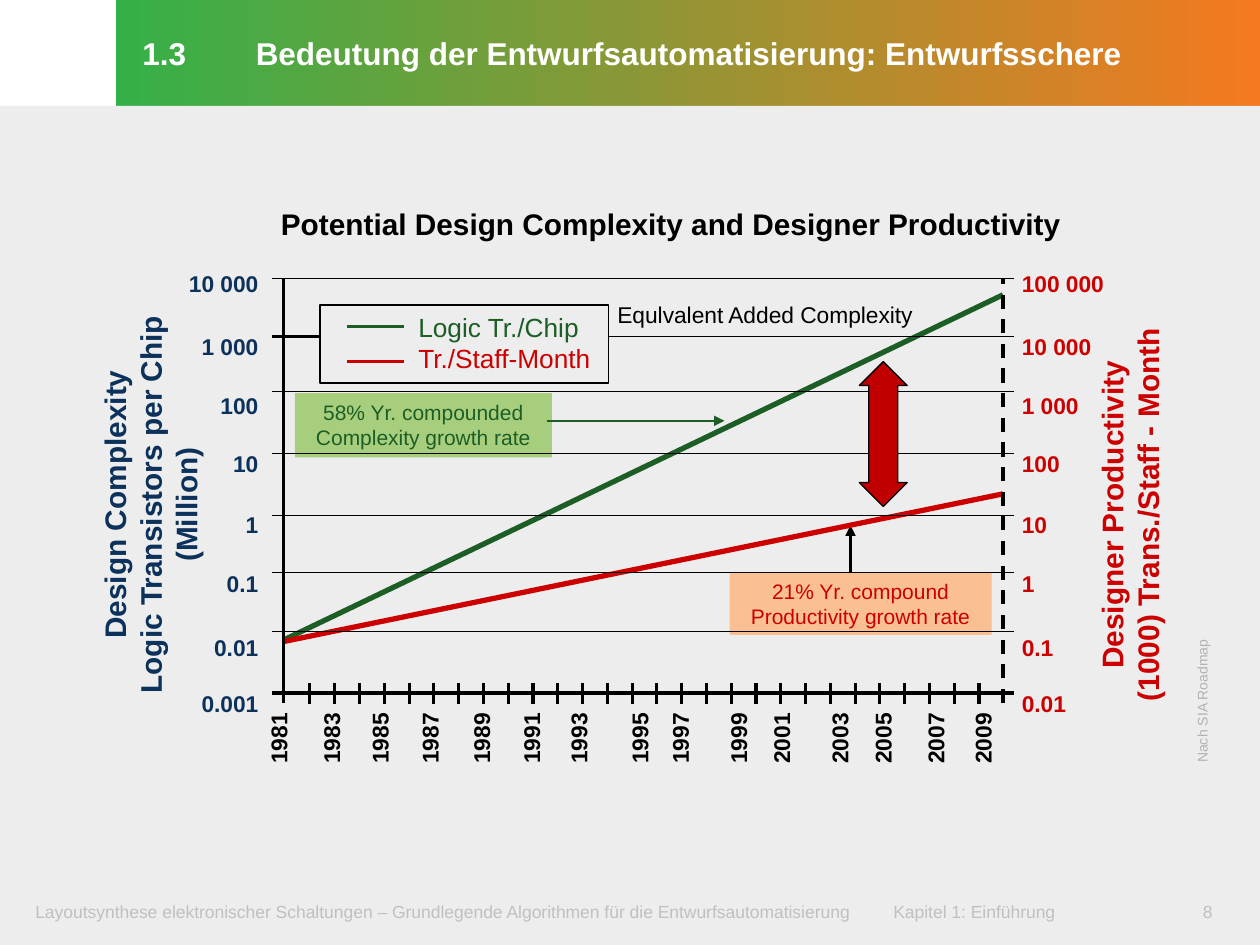
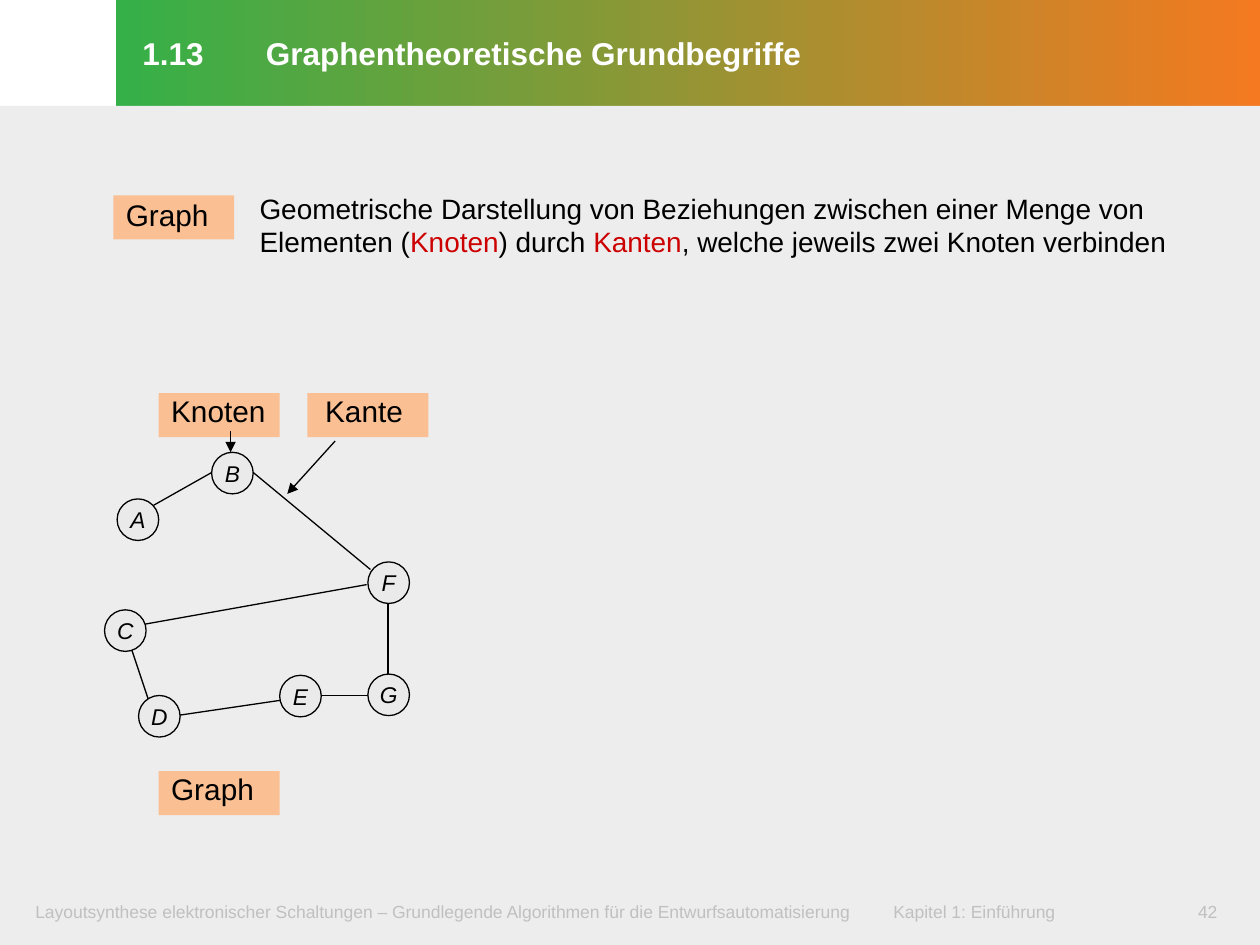
from copy import deepcopy

from lxml import etree
from pptx import Presentation
from pptx import util as u
from pptx.dml import color as dml
from pptx.enum import dml as lines, shapes, text
from pptx.oxml import ns

FONT = "Arial"
BLACK, WHITE, PANEL, NODE = "000000", "FFFFFF", "EDEDED", "EAEAEA"
GREEN, RED, NAVY, PEACH, LIME = "1C5E25", "CC0000", "0C325C", "FAC094", "A7CE7C"
FOOT, NOTE, CRIMSON = "C0C0C0", "B2B2B2", "C00000"
LEFT, MID, RIGHT = text.PP_ALIGN.LEFT, text.PP_ALIGN.CENTER, text.PP_ALIGN.RIGHT
TOP, CENTER = text.MSO_ANCHOR.TOP, text.MSO_ANCHOR.MIDDLE
KIND = shapes.MSO_SHAPE
PAD = (0.11, 0.05, 0.11, 0.05)
FOOT_PAD = (0.12, 0.06, 0.12, 0.06)
TITLE_PAD = (0.21, 0.05, 0.1, 0.07)


def rgb(code):
    """Turn a hex string into a colour."""
    return dml.RGBColor.from_string(code)


def put(obj, vals):
    """Set attributes of an object from a dict."""
    for key, val in vals.items():
        setattr(obj, key, val)


def box(at):
    """Turn left, top, width, height in inches into lengths."""
    return [u.Inches(n) for n in at]


def place(shape, at):
    """Move and size a shape."""
    put(shape, dict(zip(("left", "top", "width", "height"), box(at))))


def add_xml(parent, tag, **attrs):
    """Append a drawing element to a parent."""
    return etree.SubElement(parent, ns.qn(tag), attrs)


def add_run(par, words, color, look):
    """Add text in one colour, with a line break at each newline."""
    for i, line in enumerate(words.split("\n")):
        if i:
            par.add_line_break()
            last = par.runs[-1]._r.rPr
            par._p[-1].append(deepcopy(last))
        if line:
            run = par.add_run()
            run.text = line
            put(run.font, look)
            run.font.color.rgb = rgb(color)


def write(shape, paras, size, color=BLACK, pad=PAD, align=LEFT, anchor=TOP,
          wrap=True, pitch=(), before=0, tab=None, **look):
    """Fill a shape with paragraphs, each a string or a list of coloured runs."""
    frame = shape.text_frame
    edges = ("margin_left", "margin_top", "margin_right", "margin_bottom")
    put(frame, dict(zip(edges, box(pad))))
    put(frame, {"word_wrap": wrap, "vertical_anchor": anchor,
                "auto_size": text.MSO_AUTO_SIZE.NONE})
    look = {"name": FONT, "size": u.Pt(size), **look}
    for i, runs in enumerate(paras):
        par = frame.add_paragraph() if i else frame.paragraphs[0]
        par.alignment = align
        if tab:
            tabs = add_xml(par._p.get_or_add_pPr(), "a:tabLst")
            add_xml(tabs, "a:tab", pos=str(u.Inches(tab)), algn="l")
        if pitch:
            par.line_spacing = pitch[i]
        if i and before:
            par.space_before = u.Pt(before)
        for words, tint in [(runs, color)] if isinstance(runs, str) else runs:
            add_run(par, words, tint, look)


def label(slide, at, paras, size, turn=0, **style):
    """Add a text box, turned by some degrees."""
    area = slide.shapes.add_textbox(*box(at))
    area.rotation = turn
    write(area, paras, size, **style)


def block(slide, at, fill=None, line=None, width=0.75, kind=KIND.RECTANGLE):
    """Add a preset shape with an optional fill and outline."""
    shape = slide.shapes.add_shape(kind, *box(at))
    shape.shadow.inherit = False
    if fill:
        shape.fill.solid()
        shape.fill.fore_color.rgb = rgb(fill)
    else:
        shape.fill.background()
    if line:
        shape.line.color.rgb = rgb(line)
        shape.line.width = u.Pt(width)
    else:
        shape.line.fill.background()
    return shape


def stroke(slide, x1, y1, x2, y2, width=0.75, color=BLACK, dash=False, head=False):
    """Draw a straight line, dashed or with an arrowhead on request."""
    ends = box((x1, y1, x2, y2))
    link = slide.shapes.add_connector(shapes.MSO_CONNECTOR.STRAIGHT, *ends)
    link.line.color.rgb = rgb(color)
    link.line.width = u.Pt(width)
    if dash:
        link.line.dash_style = lines.MSO_LINE.DASH
    if head:
        add_xml(link.line._get_or_add_ln(), "a:tailEnd", type="triangle")
    add_xml(link._element.spPr, "a:effectLst")


def new_slide(deck, title, tab, number):
    """Add a slide with the title band, panel and footer."""
    slide = deck.slides.add_slide(deck.slide_layouts[5])
    band = slide.shapes.title
    place(band, (0.92, 0, 9.08, 0.84))
    band.fill.gradient()
    band.fill.gradient_angle = 0
    for stop, code in zip(band.fill.gradient_stops, ("35B048", "F47920")):
        stop.color.rgb = rgb(code)
    write(band, [title], 18, WHITE, TITLE_PAD, anchor=CENTER,
          pitch=[u.Pt(23.5)], tab=tab, bold=True)
    block(slide, (0, 0.84, 10, 6.66), PANEL)
    foot = ("Layoutsynthese elektronischer Schaltungen – Grundlegende Algorithmen "
            "für die Entwurfsautomatisierung\tKapitel 1: Einführung")
    label(slide, (0.16, 7.09, 8.85, 0.32), [foot], 10, color=FOOT,
          pad=FOOT_PAD, tab=6.81)
    label(slide, (9.29, 7.09, 0.59, 0.32), [number], 10, color=FOOT,
          pad=FOOT_PAD, align=MID)
    return slide


def draw_axes(slide):
    """Draw the axes, grid lines and year ticks."""
    stroke(slide, 2.16, 5.5, 8.05, 5.5, 2)
    stroke(slide, 2.25, 5.58, 2.25, 2.21, 2)
    stroke(slide, 7.96, 5.58, 7.96, 2.21, 2, dash=True)
    for y in (2.21, 3.11, 3.6, 4.09, 4.54, 5.01):
        stroke(slide, 2.16, y, 8.05, y, 0.5)
    stroke(slide, 4.83, 2.67, 8.05, 2.67, 0.5)
    stroke(slide, 2.16, 2.67, 2.54, 2.67, 1.75)
    first, last, count = 2.46, 7.77, 28
    for i in range(count):
        x = first + i * (last - first) / (count - 1)
        stroke(slide, x, 5.42, x, 5.59, 1.75)


def label_axes(slide):
    """Write the scales and names of the axes."""
    scale = {"size": 13, "before": 7.5, "bold": True}
    years = [str(y) for y in range(1981, 2010, 2)]
    gaps = [1, 1.45, 1.3, 1.35, 1.4, 1.35, 1.25, 1.75, 1, 1.65, 1.1, 1.65,
            1.1, 1.45, 1.25]
    label(slide, (4.51, 2.79, 0.92, 5.84), years, turn=270, pitch=gaps, **scale)
    steps = ["100 000", "10 000", "1 000", "100", "10", "1", "0.1", "0.01", "0.001"]
    gaps = [1, 1.85, 1.65, 1.65, 1.75, 1.7, 1.85, 1.55]
    label(slide, (1.33, 2.09, 0.83, 3.6), steps[1:], color=NAVY, align=RIGHT,
          pitch=gaps, **scale)
    label(slide, (8, 2.09, 0.96, 3.6), steps[:-1], color=RED, pitch=gaps, **scale)
    name = {"size": 17, "turn": 270, "align": MID, "bold": True}
    label(slide, (-0.48, 3.53, 3.34, 0.95),
          ["Design Complexity\nLogic Transistors per Chip\n(Million)"],
          color=NAVY, **name)
    label(slide, (7.21, 3.75, 3.51, 0.67),
          ["Designer Productivity\n(1000) Trans./Staff - Month"], color=RED, **name)


def draw_key(slide):
    """Draw the legend of the two growth lines."""
    block(slide, (2.54, 2.42, 2.29, 0.62), line=BLACK, width=1)
    for y, color in ((2.59, GREEN), (2.87, RED)):
        stroke(slide, 2.75, y, 3.21, y, 1.5, color)
    label(slide, (3.21, 2.42, 1.75, 0.61),
          [[("Logic Tr./Chip\n", GREEN), ("Tr./Staff-Month", RED)]], 15)


def gap_slide(deck):
    """Build the slide on the design gap."""
    slide = new_slide(deck, "1.3\tBedeutung der Entwurfsautomatisierung: "
                      "Entwurfsschere", 0.9, "8")
    stroke(slide, 6.75, 4.59, 6.75, 4.17, 1.25, head=True)
    stroke(slide, 2.25, 5.08, 7.96, 2.34, 3, GREEN)
    stroke(slide, 2.26, 5.09, 7.96, 3.92, 3, RED)
    rates = (((2.34, 3.12, 2.04, 0.51), LIME, GREEN,
              "58% Yr. compounded\nComplexity growth rate"),
             ((5.79, 4.54, 2.08, 0.5), PEACH, RED,
              "21% Yr. compound\nProductivity growth rate"))
    for at, fill, color, words in rates:
        write(block(slide, at, fill), [words], 12, color, align=MID)
    stroke(slide, 4.34, 3.34, 5.75, 3.34, 1.25, GREEN, head=True)
    draw_axes(slide)
    draw_key(slide)
    label_axes(slide)
    label(slide, (2.12, 1.58, 6.5, 0.39),
          ["Potential Design Complexity and Designer Productivity"], 17, bold=True)
    label(slide, (4.79, 2.34, 2.83, 0.32), ["Equlvalent Added Complexity"], 13)
    label(slide, (8.91, 5.41, 1.27, 0.24), ["Nach SIA Roadmap"], 8, turn=270,
          color=NOTE, wrap=False)
    arrow = block(slide, (6.82, 2.87, 0.38, 1.15), CRIMSON, BLACK,
                  kind=KIND.UP_DOWN_ARROW)
    arrow.adjustments[1] = 0.61


def graph_slide(deck):
    """Build the slide on graph terms."""
    slide = new_slide(deck, "1.13\tGraphentheoretische Grundbegriffe", 0.98, "42")
    label(slide, (1.85, 1.47, 7.51, 0.66),
          [[("Geometrische Darstellung von Beziehungen zwischen einer Menge von\n"
             "Elementen (", BLACK), ("Knoten", RED), (") durch ", BLACK),
            ("Kanten", RED), (", welche jeweils zwei Knoten verbinden", BLACK)]],
          16, pad=TITLE_PAD, wrap=False)
    terms = (("Graph", 0.9, 1.55, 0.1, 0.01), ("Graph", 1.26, 6.12, 0.1, 0),
             ("Kante", 2.44, 3.12, 0.14, 0), ("Knoten", 1.26, 3.12, 0.1, 0))
    for word, x, y, dx, dy in terms:
        write(block(slide, (x, y, 0.96, 0.35), PEACH), [word], 17,
              pad=(dx, dy, 0, 0))
    edges = ((1.22, 4.01, 1.68, 3.75), (2.01, 3.75, 2.94, 4.52),
             (0.89, 5, 2.91, 4.64), (1, 5.02, 1.25, 5.77),
             (1.33, 5.69, 2.28, 5.55), (2.5, 5.52, 2.92, 5.52),
             (3.08, 4.77, 3.08, 5.44))
    for edge in edges:
        stroke(slide, *edge)
    nodes = {"A": (0.93, 3.96), "B": (1.68, 3.59), "C": (0.83, 4.84),
             "D": (1.1, 5.52), "E": (2.22, 5.36), "F": (2.92, 4.46),
             "G": (2.92, 5.35)}
    for name, spot in nodes.items():
        node = block(slide, (*spot, 0.33, 0.33), NODE, BLACK, kind=KIND.OVAL)
        write(node, [name], 13, pad=(0, 0, 0, 0), align=MID, anchor=CENTER,
              wrap=False, italic=True)
    stroke(slide, 1.83, 3.42, 1.83, 3.59, head=True)
    stroke(slide, 2.66, 3.5, 2.28, 3.92, head=True)


def main():
    """Build and save the deck."""
    deck = Presentation()
    put(deck, {"slide_width": u.Inches(10), "slide_height": u.Inches(7.5)})
    gap_slide(deck)
    graph_slide(deck)
    deck.save("out.pptx")


if __name__ == "__main__":
    main()
